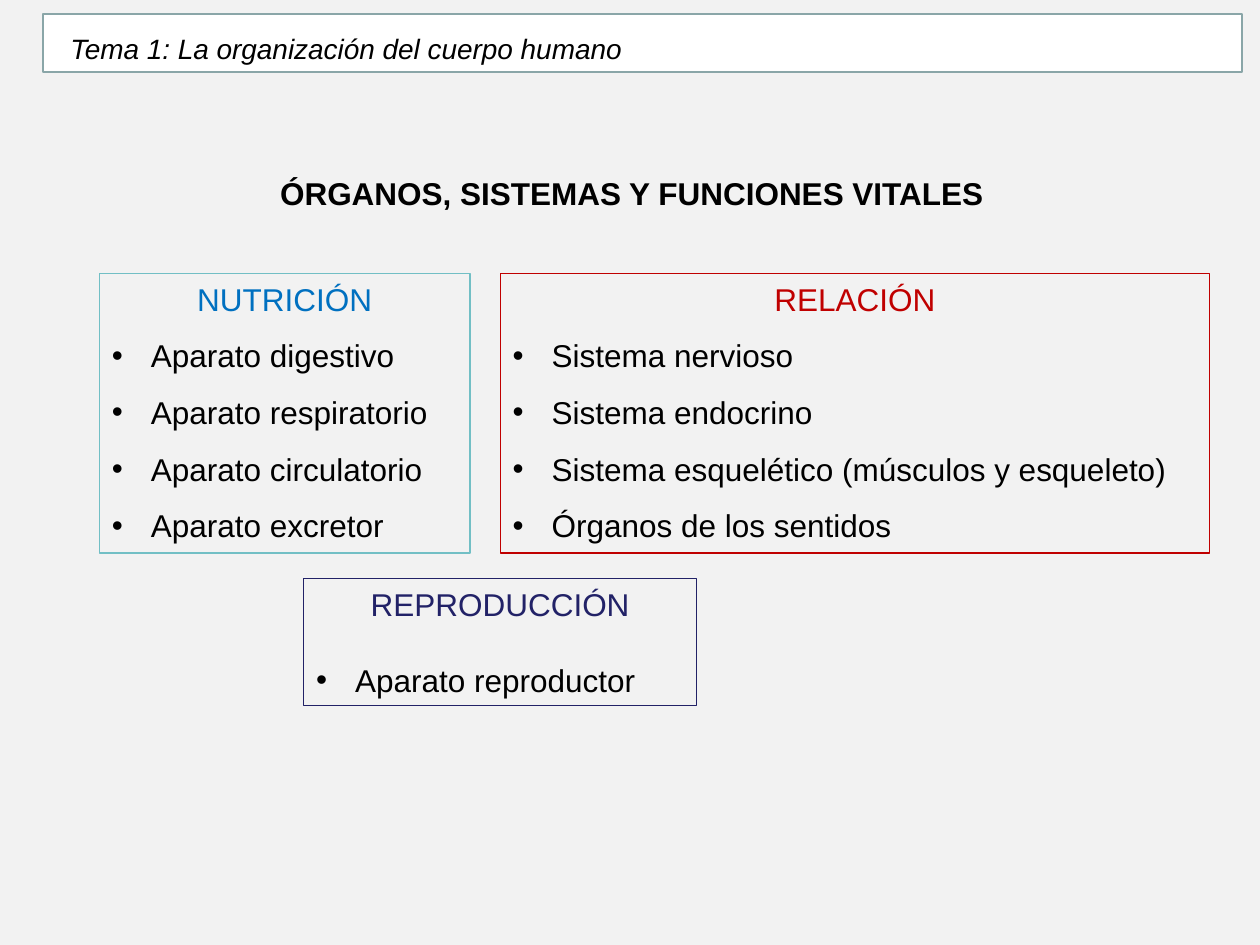
from lxml.etree import SubElement
from pptx import Presentation
from pptx.dml.color import RGBColor
from pptx.enum.shapes import MSO_SHAPE
from pptx.enum.text import MSO_ANCHOR, PP_ALIGN
from pptx.oxml.ns import qn
from pptx.util import Inches, Pt


def color(value):
    return RGBColor.from_string(value)


class SlideBuilder:
    font = "Arial"
    ink = "000000"
    indent = Inches(0.31)

    def __init__(self, slide, background):
        self.slide = slide
        slide.background.fill.solid()
        slide.background.fill.fore_color.rgb = color(background)

    def style(self, paragraph, size=18, ink=ink, bold=False, italic=False):
        for run in paragraph.runs:
            run.font.name = self.font
            run.font.size = Pt(size)
            run.font.color.rgb = color(ink)
            run.font.bold = bold
            run.font.italic = italic

    def text(self, words, left, top, width, height, align=PP_ALIGN.LEFT, **style):
        box = self.slide.shapes.add_textbox(
            Inches(left), Inches(top), Inches(width), Inches(height))
        box.text_frame.word_wrap = True
        box.text_frame.text = words
        paragraph = box.text_frame.paragraphs[0]
        paragraph.alignment = align
        self.style(paragraph, **style)

    def frame(self, left, top, width, height, line, weight=0.75, fill=None):
        shape = self.slide.shapes.add_shape(
            MSO_SHAPE.RECTANGLE, Inches(left), Inches(top), Inches(width), Inches(height))
        shape.shadow.inherit = False
        if fill:
            shape.fill.solid()
            shape.fill.fore_color.rgb = color(fill)
        else:
            shape.fill.background()
        shape.line.color.rgb = color(line)
        shape.line.width = Pt(weight)
        return shape

    def bullet(self, paragraph):
        properties = paragraph._p.get_or_add_pPr()
        properties.set("marL", str(self.indent))
        properties.set("indent", str(-self.indent))
        SubElement(properties, qn("a:buFont")).set("typeface", self.font)
        SubElement(properties, qn("a:buChar")).set("char", "•")

    def function_box(self, title, organs, left, top, width, height, ink,
                     line=None, spacing=1.5, gap=0):
        content = self.frame(left, top, width, height, line or ink).text_frame
        content.word_wrap = True
        content.vertical_anchor = MSO_ANCHOR.TOP
        content.text = title
        heading = content.paragraphs[0]
        heading.alignment = PP_ALIGN.CENTER
        self.style(heading, ink=ink)
        for organ in organs:
            item = content.add_paragraph()
            item.text = organ
            item.alignment = PP_ALIGN.LEFT
            item.line_spacing = spacing
            item.space_before = Pt(gap)
            self.bullet(item)
            self.style(item)


def main():
    presentation = Presentation()
    presentation.slide_width = Inches(10)
    presentation.slide_height = Inches(7.5)
    builder = SlideBuilder(
        presentation.slides.add_slide(presentation.slide_layouts[6]), "F2F2F2")

    builder.text("ÓRGANOS, SISTEMAS Y FUNCIONES VITALES", 1.91, 1.33, 6.21, 0.4,
                 PP_ALIGN.CENTER, bold=True)

    nutrition = ["Aparato " + name for name in
                 ("digestivo", "respiratorio", "circulatorio", "excretor")]
    relation = ["Sistema nervioso", "Sistema endocrino",
                "Sistema esquelético (músculos y esqueleto)",
                "Órganos de los sentidos"]
    builder.function_box("NUTRICIÓN", nutrition, 0.79, 2.17, 2.94, 2.22,
                         "0070C0", line="72BFC5")
    builder.function_box("RELACIÓN", relation, 3.97, 2.17, 5.63, 2.22, "C00000")
    builder.function_box("REPRODUCCIÓN", ["Aparato reproductor"],
                         2.41, 4.59, 3.12, 1.01, "222267", spacing=1, gap=22)

    builder.frame(0.34, 0.11, 9.52, 0.46, "8AA6A8", weight=1, fill="FFFFFF")
    builder.text("Tema 1: La organización del cuerpo humano",
                 0.46, 0.2, 5.26, 0.37, size=16, italic=True)

    presentation.save("out.pptx")


if __name__ == "__main__":
    main()
